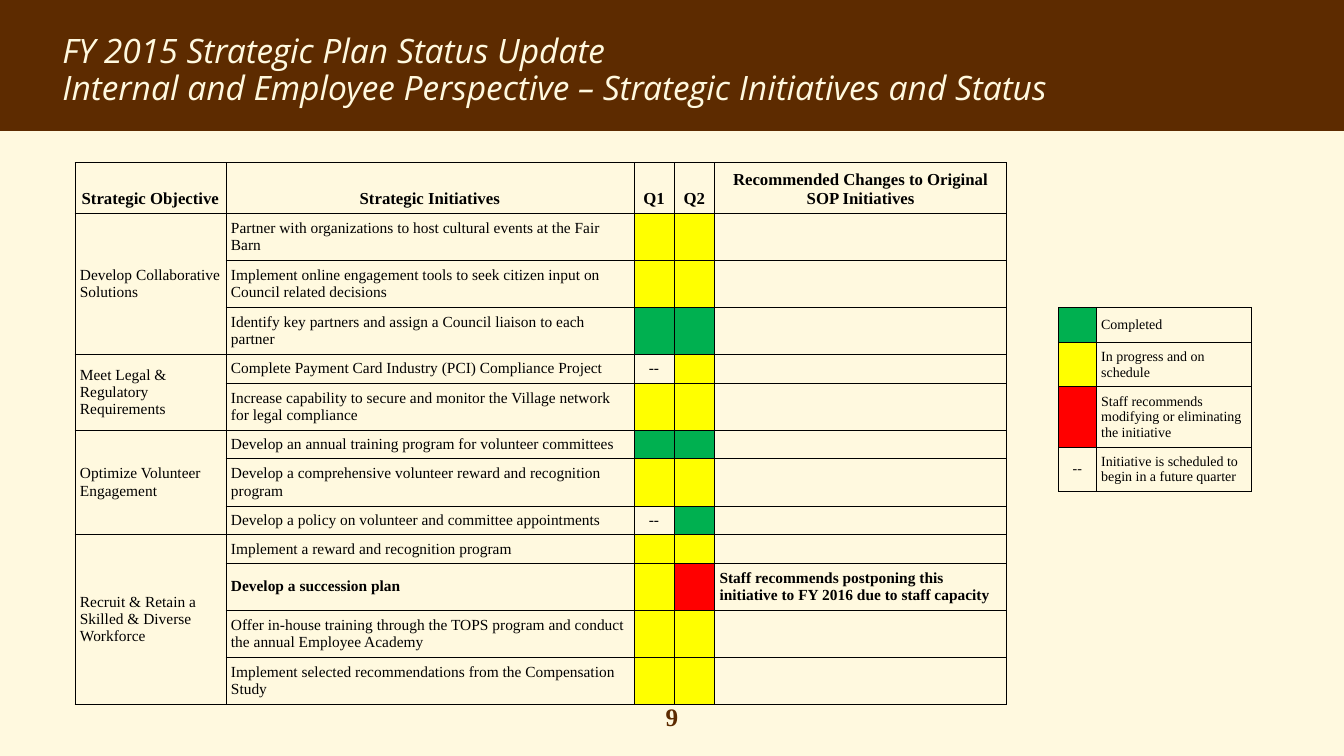
from dataclasses import dataclass

from lxml import etree
from pptx import Presentation
from pptx.dml.color import RGBColor
from pptx.enum import shapes, text
from pptx.oxml import ns
from pptx.util import Pt


@dataclass(frozen=True)
class Theme:
    cream: str = "FFF9DF"
    brown: str = "5D2B00"
    black: str = "000000"
    green: str = "00B050"
    yellow: str = "FFFF00"
    red: str = "FF0000"
    title_font: str = "Open Sans"
    body_font: str = "Times New Roman"
    title: int = 24
    number: int = 18
    header: int = 12
    body: int = 11
    legend: int = 10
    border: float = 0.5
    inset: float = 3.6


T = Theme()
STATUS = {"G": T.green, "Y": T.yellow, "R": T.red}
CENTER = text.PP_ALIGN.CENTER
MIDDLE = text.MSO_ANCHOR.MIDDLE
BOTTOM = text.MSO_ANCHOR.BOTTOM

# Row heights by number of text lines
ONE_LINE, TWO_LINES, HEADER_HEIGHT = 20.4, 33.6, 35.3

HEADERS = ["Strategic Objective", "Strategic Initiatives", "Q1", "Q2",
           "Recommended Changes to Original SOP Initiatives"]

# Objective -> (initiative, Q1, Q2, row height, recommended change)
OBJECTIVES = {
    "Develop Collaborative Solutions": [
        ("Partner with organizations to host cultural events at the Fair Barn",
         "Y", "Y", TWO_LINES, ""),
        ("Implement online engagement tools to seek citizen input on Council related decisions",
         "Y", "Y", TWO_LINES, ""),
        ("Identify key partners and assign a Council liaison to each partner",
         "G", "G", TWO_LINES, ""),
    ],
    "Meet Legal & Regulatory Requirements": [
        ("Complete Payment Card Industry (PCI) Compliance Project",
         "--", "Y", ONE_LINE, ""),
        ("Increase capability to secure and monitor the Village network for legal compliance",
         "Y", "Y", TWO_LINES, ""),
    ],
    "Optimize Volunteer Engagement": [
        ("Develop an annual training program for volunteer committees",
         "G", "G", ONE_LINE, ""),
        ("Develop a comprehensive volunteer reward and recognition program",
         "Y", "Y", TWO_LINES, ""),
        ("Develop a policy on volunteer and committee appointments",
         "--", "G", ONE_LINE, ""),
    ],
    "Recruit & Retain a Skilled & Diverse Workforce": [
        ("Implement a reward and recognition program", "Y", "Y", ONE_LINE, ""),
        ("Develop a succession plan", "Y", "R", TWO_LINES,
         "Staff recommends postponing this initiative to FY 2016 due to staff capacity"),
        ("Offer in-house training through the TOPS program and conduct the annual Employee Academy",
         "Y", "Y", TWO_LINES, ""),
        ("Implement selected recommendations from the Compensation Study",
         "Y", "Y", TWO_LINES, ""),
    ],
}

# Status, meaning, row height
LEGEND = [
    ("G", "Completed", 25.2),
    ("Y", "In progress and on schedule", 30.8),
    ("R", "Staff recommends modifying or eliminating the initiative", 43.4),
    ("--", "Initiative is scheduled to begin in a future quarter", 31),
]


def write(tf, lines, size, font=T.body_font, color=T.black, bold=False,
          italic=False, align=text.PP_ALIGN.LEFT, spacing=1.0):
    """Fill a text frame, one paragraph for each line."""
    for i, line in enumerate(lines.split("\n")):
        p = tf.paragraphs[0] if i == 0 else tf.add_paragraph()
        p.alignment, p.line_spacing = align, spacing
        if i == 0:
            p.space_before = Pt(0)
        if not line:
            # An empty cell keeps its row only as tall as small text
            etree.SubElement(p._p, ns.qn("a:endParaRPr"), sz=str(size * 100))
            continue
        r = p.add_run()
        r.text = line
        f = r.font
        f.name, f.size, f.bold, f.italic = font, Pt(size), bold, italic
        f.color.rgb = RGBColor.from_string(color)


def add_border(cell):
    tc_pr = cell._tc.get_or_add_tcPr()
    for side in ("lnL", "lnR", "lnT", "lnB"):
        ln = etree.SubElement(tc_pr, ns.qn(f"a:{side}"), w=str(int(Pt(T.border))))
        fill = etree.SubElement(ln, ns.qn("a:solidFill"))
        etree.SubElement(fill, ns.qn("a:srgbClr"), val=T.black)


def add_grid(s, left, top, widths, heights):
    """Add an unstyled table with thin borders."""
    frame = s.shapes.add_table(len(heights), len(widths), Pt(left), Pt(top),
                               Pt(sum(widths)), Pt(sum(heights)))
    table = frame.table
    table.first_row = table.horz_banding = False
    for column, width in zip(table.columns, widths):
        column.width = Pt(width)
    for row, height in zip(table.rows, heights):
        row.height = Pt(height)
    for cell in table.iter_cells():
        add_border(cell)
        cell.fill.background()
        cell.margin_left = cell.margin_right = Pt(T.inset)
        cell.margin_top = cell.margin_bottom = Pt(T.inset)
        cell.vertical_anchor = MIDDLE
    return table


def set_status(cell, status, size):
    """Show a status as a coloured cell, or as text when it has no colour."""
    if status in STATUS:
        cell.fill.solid()
        cell.fill.fore_color.rgb = RGBColor.from_string(STATUS[status])
    write(cell.text_frame, "" if status in STATUS else status, size, align=CENTER)


def add_title(prs, s):
    band = s.shapes.add_shape(shapes.MSO_SHAPE.RECTANGLE, 0, 0, prs.slide_width, Pt(93.6))
    band.shadow.inherit = False
    band.fill.solid()
    band.fill.fore_color.rgb = RGBColor.from_string(T.brown)
    band.line.fill.background()

    title = s.shapes.title
    s.shapes._spTree.append(title._element)  # in front of the band
    title.left, title.top, title.width, title.height = Pt(37.4), Pt(18), Pt(885), Pt(65.5)
    tf = title.text_frame
    tf.auto_size, tf.vertical_anchor = text.MSO_AUTO_SIZE.NONE, MIDDLE
    write(tf, "FY 2015 Strategic Plan Status Update\n"
          "Internal and Employee Perspective – Strategic Initiatives and Status",
          T.title, font=T.title_font, color=T.cream, italic=True, spacing=0.9)


def add_initiatives(s):
    heights = [HEADER_HEIGHT] + [row[3] for rows in OBJECTIVES.values() for row in rows]
    table = add_grid(s, 53.5, 116.2, [107.9, 291.4, 28.8, 28.8, 208.8], heights)
    for col, header in enumerate(HEADERS):
        cell = table.cell(0, col)
        cell.vertical_anchor = BOTTOM
        write(cell.text_frame, header, T.header, bold=True, align=CENTER)

    n = 1
    for objective, rows in OBJECTIVES.items():
        table.cell(n, 0).merge(table.cell(n + len(rows) - 1, 0))
        write(table.cell(n, 0).text_frame, objective, T.body)
        for initiative, q1, q2, _, change in rows:
            bold = bool(change)
            write(table.cell(n, 1).text_frame, initiative, T.body, bold=bold)
            set_status(table.cell(n, 2), q1, T.body)
            set_status(table.cell(n, 3), q2, T.body)
            write(table.cell(n, 4).text_frame, change, T.body, bold=bold)
            n += 1


def add_legend(s):
    table = add_grid(s, 756, 219.6, [27, 110.8], [row[2] for row in LEGEND])
    for n, (status, meaning, _) in enumerate(LEGEND):
        set_status(table.cell(n, 0), status, T.legend)
        write(table.cell(n, 1).text_frame, meaning, T.legend)


def add_page_number(s):
    box = s.shapes.add_textbox(Pt(444), Pt(497.5), Pt(72), Pt(29))
    box.text_frame.word_wrap = True
    write(box.text_frame, "9", T.number, color=T.brown, bold=True, align=CENTER)


def main():
    prs = Presentation()
    prs.slide_width, prs.slide_height = Pt(960), Pt(540)
    s = prs.slides.add_slide(prs.slide_layouts[5])
    s.background.fill.solid()
    s.background.fill.fore_color.rgb = RGBColor.from_string(T.cream)
    add_title(prs, s)
    add_page_number(s)
    add_initiatives(s)
    add_legend(s)
    prs.save("out.pptx")


if __name__ == "__main__":
    main()
